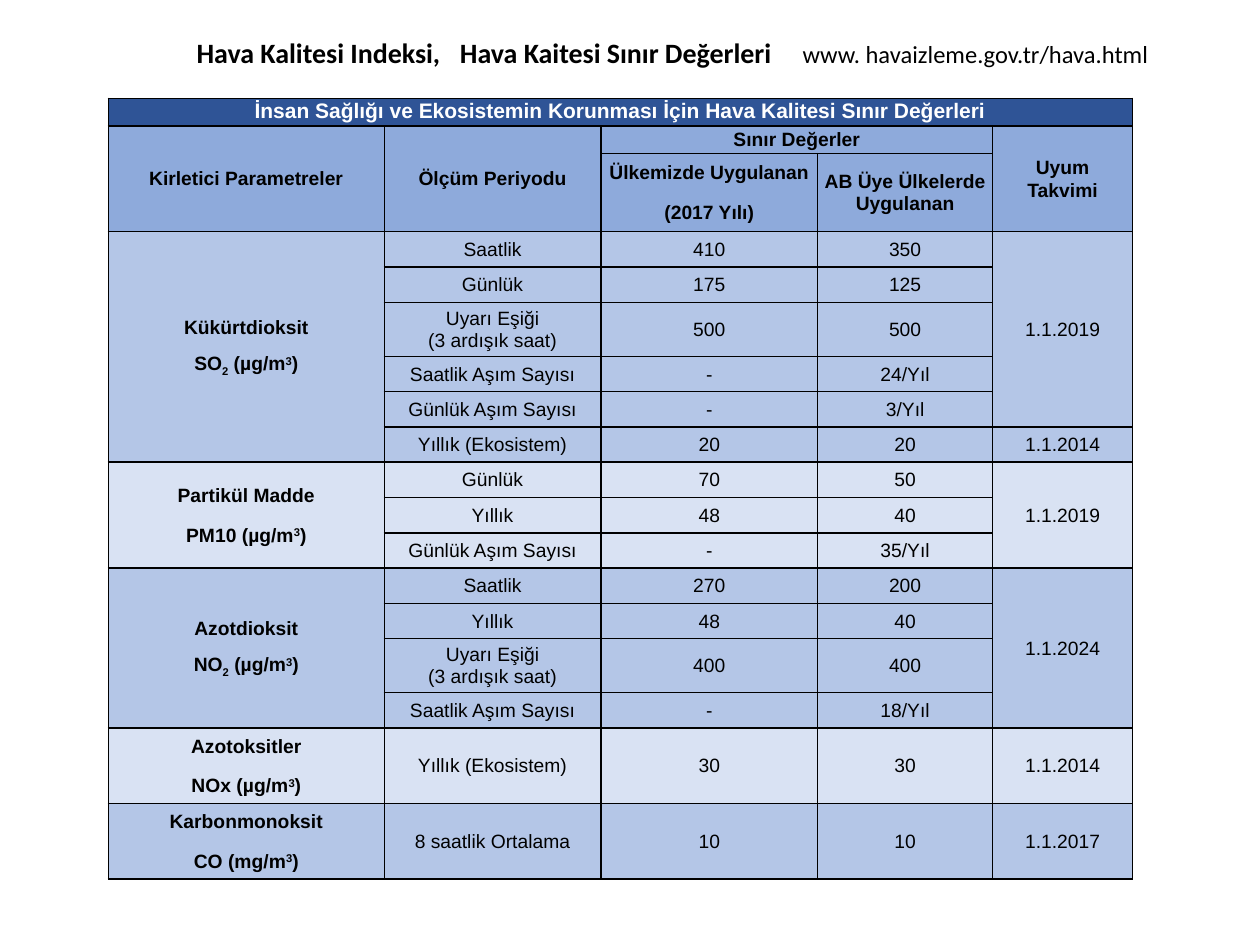
from lxml import etree
from pptx import Presentation
from pptx.dml.color import RGBColor
from pptx.enum import text as t
from pptx.oxml import ns
from pptx.util import Inches, Pt

BLACK = RGBColor(0x00, 0x00, 0x00)
WHITE = RGBColor(0xFF, 0xFF, 0xFF)
NAVY = RGBColor(0x2F, 0x54, 0x96)
HEADER_BLUE = RGBColor(0x8E, 0xAA, 0xDB)
MID_BLUE = RGBColor(0xB4, 0xC6, 0xE7)
PALE_BLUE = RGBColor(0xD9, 0xE2, 0xF3)

COLUMN_WIDTHS = [2.19, 1.72, 1.72, 1.39, 1.11]
HEADER_HEIGHTS = [0.22, 0.22, 0.62]
LINE_HEIGHT, TWO_LINE_HEIGHT, SINGLE_GROUP_HEIGHT = 0.28, 0.43, 0.6

# Row, column, row span, column span, paragraphs
HEADERS = [
    (1, 0, 2, 1, ["Kirletici Parametreler"]),
    (1, 1, 2, 1, ["Ölçüm Periyodu"]),
    (1, 2, 1, 2, ["Sınır Değerler"]),
    (1, 4, 2, 1, ["Uyum Takvimi"]),
    (2, 2, 1, 1, ["Ülkemizde Uygulanan", "(2017 Yılı)"]),
    (2, 3, 1, 1, ["AB Üye Ülkelerde Uygulanan"]),
]

# Name, (symbol, subscript, unit), limits by period, (date, rows covered)
POLLUTANTS = [
    ("Kükürtdioksit", ("SO", "2", " (µg/m"),
     [("Saatlik", "410", "350"),
      ("Günlük", "175", "125"),
      ("Uyarı Eşiği\n(3 ardışık saat)", "500", "500"),
      ("Saatlik Aşım Sayısı", "-", "24/Yıl"),
      ("Günlük Aşım Sayısı", "-", "3/Yıl"),
      ("Yıllık (Ekosistem)", "20", "20")],
     [("1.1.2019", 5), ("1.1.2014", 1)]),
    ("Partikül Madde", ("PM10", "", " (µg/m"),
     [("Günlük", "70", "50"),
      ("Yıllık", "48", "40"),
      ("Günlük Aşım Sayısı", "-", "35/Yıl")],
     [("1.1.2019", 3)]),
    ("Azotdioksit", ("NO", "2", " (µg/m"),
     [("Saatlik", "270", "200"),
      ("Yıllık", "48", "40"),
      ("Uyarı Eşiği\n(3 ardışık saat)", "400", "400"),
      ("Saatlik Aşım Sayısı", "-", "18/Yıl")],
     [("1.1.2024", 4)]),
    ("Azotoksitler", ("NOx", "", " (µg/m"),
     [("Yıllık (Ekosistem)", "30", "30")], [("1.1.2014", 1)]),
    ("Karbonmonoksit", ("CO", "", " (mg/m"),
     [("8 saatlik Ortalama", "10", "10")], [("1.1.2017", 1)]),
]


def add_run(paragraph, content, font_name, size, color, bold, baseline=0):
    run = paragraph.add_run()
    run.text = content
    run.font.name, run.font.size, run.font.bold = font_name, Pt(size), bold
    run.font.color.rgb = color
    if baseline:
        run.font._element.set("baseline", str(baseline * 1000))


def formula(symbol, subscript, unit):
    """Return text parts with their baseline shift in percent."""
    if not subscript:
        return [(symbol + unit, 0), ("3", 30), (")", 0)]
    return [(symbol, 0), (subscript, -25), (unit, 0), ("3", 30), (")", 0)]


def add_title(slide):
    title = slide.shapes.title
    title.left, title.top = Inches(0.94), Inches(0.23)
    title.width, title.height = Inches(8.36), Inches(0.37)
    frame = title.text_frame
    frame.auto_size = t.MSO_AUTO_SIZE.NONE
    frame.word_wrap = True
    frame.vertical_anchor = t.MSO_ANCHOR.MIDDLE
    frame.margin_left, frame.margin_right = Inches(0.62), Inches(0.1)
    frame.margin_top = frame.margin_bottom = Inches(0.05)

    paragraph = frame.paragraphs[0]
    paragraph.alignment = t.PP_ALIGN.LEFT
    # Tab stops set the gaps between the three parts
    tabs = etree.SubElement(paragraph._p.get_or_add_pPr(), ns.qn("a:tabLst"))
    for position in (2.09, 4.81):
        etree.SubElement(tabs, ns.qn("a:tab"), pos=str(Inches(position)), algn="l")
    add_run(paragraph, "Hava Kalitesi Indeksi,\tHava Kaitesi Sınır Değerleri\t",
            "Calibri", 16, BLACK, True)
    add_run(paragraph, "www. havaizleme.gov.tr/hava.html", "Calibri", 14, BLACK, False)


def set_borders(cell):
    properties = cell._tc.get_or_add_tcPr()
    for index, side in enumerate(("lnL", "lnR", "lnT", "lnB")):
        line = etree.Element(ns.qn(f"a:{side}"), w=str(Pt(1)))
        fill = etree.SubElement(line, ns.qn("a:solidFill"))
        etree.SubElement(fill, ns.qn("a:srgbClr"), val=str(BLACK))
        properties.insert(index, line)


def fill_cell(table, row, column, paragraphs, fill, rows=1, columns=1,
              size=11, color=BLACK, bold=False):
    """Write a cell; a paragraph is a string or a list of (text, baseline)."""
    cell = table.cell(row, column)
    if rows * columns > 1:
        cell.merge(table.cell(row + rows - 1, column + columns - 1))
    for covered_row in range(row, row + rows):
        for covered_column in range(column, column + columns):
            covered = table.cell(covered_row, covered_column)
            covered.fill.solid()
            covered.fill.fore_color.rgb = fill
            set_borders(covered)
    cell.vertical_anchor = t.MSO_ANCHOR.MIDDLE
    cell.margin_left = cell.margin_right = Inches(0.05)
    cell.margin_top = cell.margin_bottom = 0

    frame = cell.text_frame
    for index, content in enumerate(paragraphs):
        paragraph = frame.add_paragraph() if index else frame.paragraphs[0]
        paragraph.alignment = t.PP_ALIGN.CENTER
        paragraph.line_spacing = Pt(12.7)
        paragraph.space_after = Pt(10)
        parts = [(content, 0)] if isinstance(content, str) else content
        for part, baseline in parts:
            for number, line in enumerate(part.split("\n")):
                if number:
                    paragraph.add_line_break()
                add_run(paragraph, line, "Arial", size, color, bold, baseline)


def row_heights():
    heights = list(HEADER_HEIGHTS)
    for _, _, limits, _ in POLLUTANTS:
        for period, _, _ in limits:
            if len(limits) == 1:
                heights.append(SINGLE_GROUP_HEIGHT)
            else:
                heights.append(TWO_LINE_HEIGHT if "\n" in period else LINE_HEIGHT)
    return heights


def add_limits_table(slide):
    heights = row_heights()
    table = slide.shapes.add_table(
        len(heights), len(COLUMN_WIDTHS), Inches(0.86), Inches(0.78),
        Inches(sum(COLUMN_WIDTHS)), Inches(sum(heights))).table
    table.first_row = table.horz_banding = False
    for column, width in zip(table.columns, COLUMN_WIDTHS):
        column.width = Inches(width)
    for row, height in zip(table.rows, heights):
        row.height = Inches(height)

    # Header rows
    fill_cell(table, 0, 0,
              ["İnsan Sağlığı ve Ekosistemin Korunması İçin Hava Kalitesi Sınır Değerleri"],
              NAVY, columns=5, size=12, color=WHITE, bold=True)
    for row, column, rows, columns, paragraphs in HEADERS:
        fill_cell(table, row, column, paragraphs, HEADER_BLUE, rows, columns, bold=True)

    # Pollutant groups in alternating shades
    top = len(HEADER_HEIGHTS)
    for group, (name, symbol, limits, dates) in enumerate(POLLUTANTS):
        fill = PALE_BLUE if group % 2 else MID_BLUE
        fill_cell(table, top, 0, [name, formula(*symbol)], fill,
                  rows=len(limits), bold=True)
        for row, values in enumerate(limits, top):
            for column, value in enumerate(values, 1):
                fill_cell(table, row, column, [value], fill)
        for date, rows in dates:
            fill_cell(table, top, 4, [date], fill, rows=rows)
            top += rows


def main():
    presentation = Presentation()
    presentation.slide_width, presentation.slide_height = Inches(10), Inches(7.5)
    slide = presentation.slides.add_slide(presentation.slide_layouts[5])
    add_limits_table(slide)
    add_title(slide)
    presentation.save("out.pptx")


if __name__ == "__main__":
    main()
